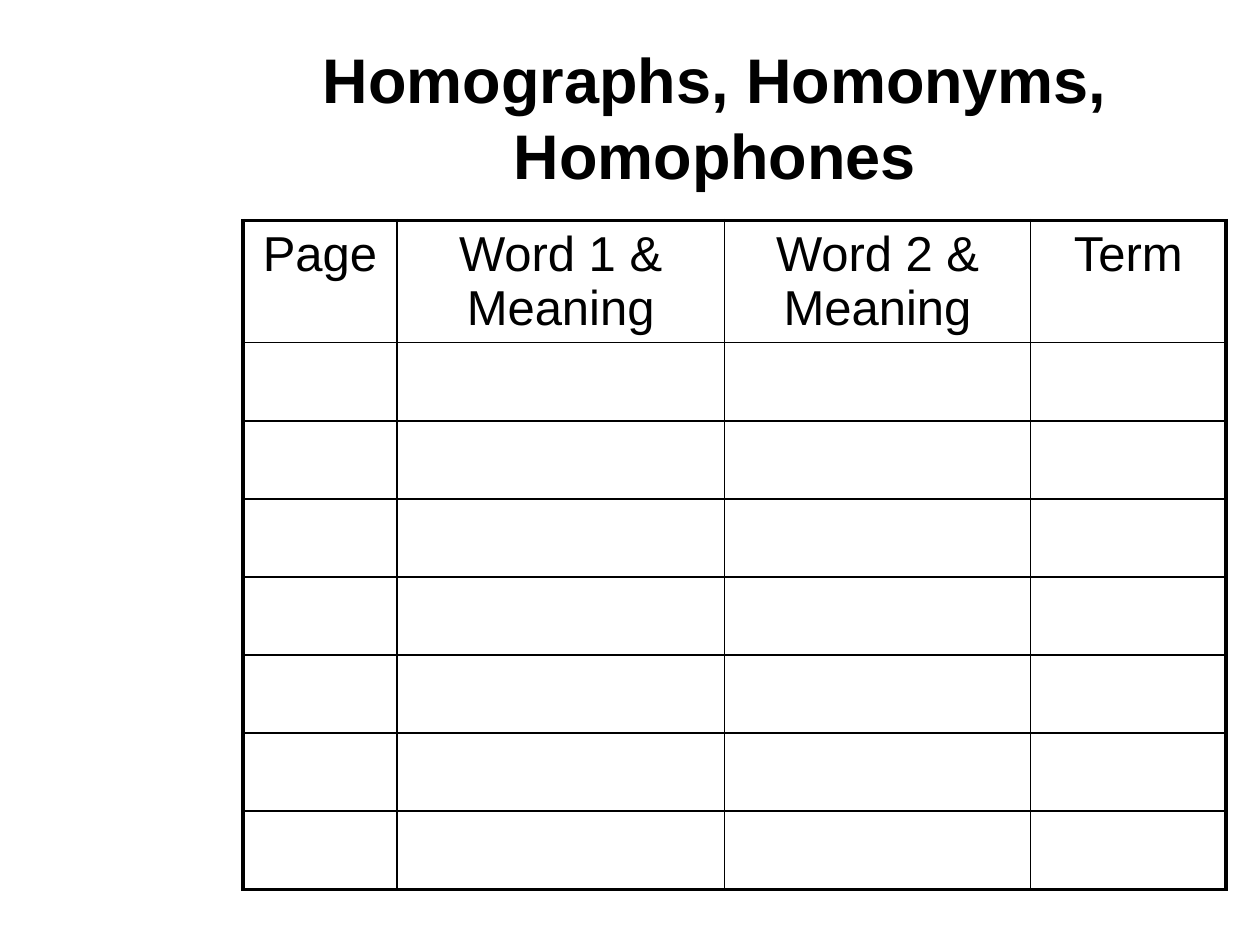
from dataclasses import dataclass

from lxml.etree import SubElement
from pptx import Presentation
from pptx.dml.color import RGBColor
from pptx.enum.text import MSO_ANCHOR, MSO_AUTO_SIZE, PP_ALIGN
from pptx.oxml.ns import qn
from pptx.util import Inches, Pt

COLOURS = {"ink": "000000"}
FONT = "Arial"
OUTER_LINE, INNER_LINE = 2.25, 1
HEADER_HEIGHT, ROW_HEIGHT, BLANK_ROWS = 0.97, 0.62, 7


@dataclass(frozen=True)
class Column:
    heading: str
    width: float


COLUMNS = [
    Column("Page", 1.22),
    Column("Word 1 & Meaning", 2.6),
    Column("Word 2 & Meaning", 2.43),
    Column("Term", 1.55),
]


def write_text(frame, text: str, *, size: float, bold: bool = False) -> None:
    frame.word_wrap = True
    paragraph = frame.paragraphs[0]
    paragraph.alignment = PP_ALIGN.CENTER
    paragraph.space_before = Pt(0)
    span = paragraph.add_run()
    span.text = text
    span.font.name = FONT
    span.font.size = Pt(size)
    span.font.bold = bold
    span.font.color.rgb = RGBColor.from_string(COLOURS["ink"])


def draw_borders(cell, *, left: float, right: float, top: float, bottom: float) -> None:
    properties = cell._tc.get_or_add_tcPr()
    sides = {"a:lnL": left, "a:lnR": right, "a:lnT": top, "a:lnB": bottom}
    for tag, width in sides.items():
        line = SubElement(properties, qn(tag), w=str(Pt(width)))
        fill = SubElement(line, qn("a:solidFill"))
        SubElement(fill, qn("a:srgbClr"), val=COLOURS["ink"])


def add_title(page, text: str) -> None:
    title = page.shapes.title
    title.left, title.top = Inches(1.85), Inches(0.3)
    title.width, title.height = Inches(7.65), Inches(1.25)
    title.text_frame.auto_size = MSO_AUTO_SIZE.NONE
    title.text_frame.vertical_anchor = MSO_ANCHOR.MIDDLE
    write_text(title.text_frame, text, size=36, bold=True)


def add_word_table(page, columns: list[Column]) -> None:
    heights = [HEADER_HEIGHT] + [ROW_HEIGHT] * BLANK_ROWS
    table = page.shapes.add_table(
        len(heights), len(columns), Inches(1.93), Inches(1.75),
        Inches(sum(column.width for column in columns)), Inches(sum(heights)),
    ).table
    table.first_row = table.horz_banding = False
    for index, column in enumerate(columns):
        table.columns[index].width = Inches(column.width)
        write_text(table.cell(0, index).text_frame, column.heading, size=28)

    last_row, last_column = len(heights) - 1, len(columns) - 1
    for row, height in enumerate(heights):
        table.rows[row].height = Inches(height)
        for index in range(len(columns)):
            cell = table.cell(row, index)
            draw_borders(
                cell,
                left=OUTER_LINE if index == 0 else INNER_LINE,
                right=OUTER_LINE if index == last_column else INNER_LINE,
                top=OUTER_LINE if row == 0 else INNER_LINE,
                bottom=OUTER_LINE if row == last_row else INNER_LINE,
            )
            cell.fill.background()


def main() -> None:
    deck = Presentation()
    deck.slide_width, deck.slide_height = Inches(10), Inches(7.5)
    page = deck.slides.add_slide(deck.slide_layouts[5])
    add_title(page, "Homographs, Homonyms, Homophones")
    add_word_table(page, COLUMNS)
    deck.save("out.pptx")


if __name__ == "__main__":
    main()
